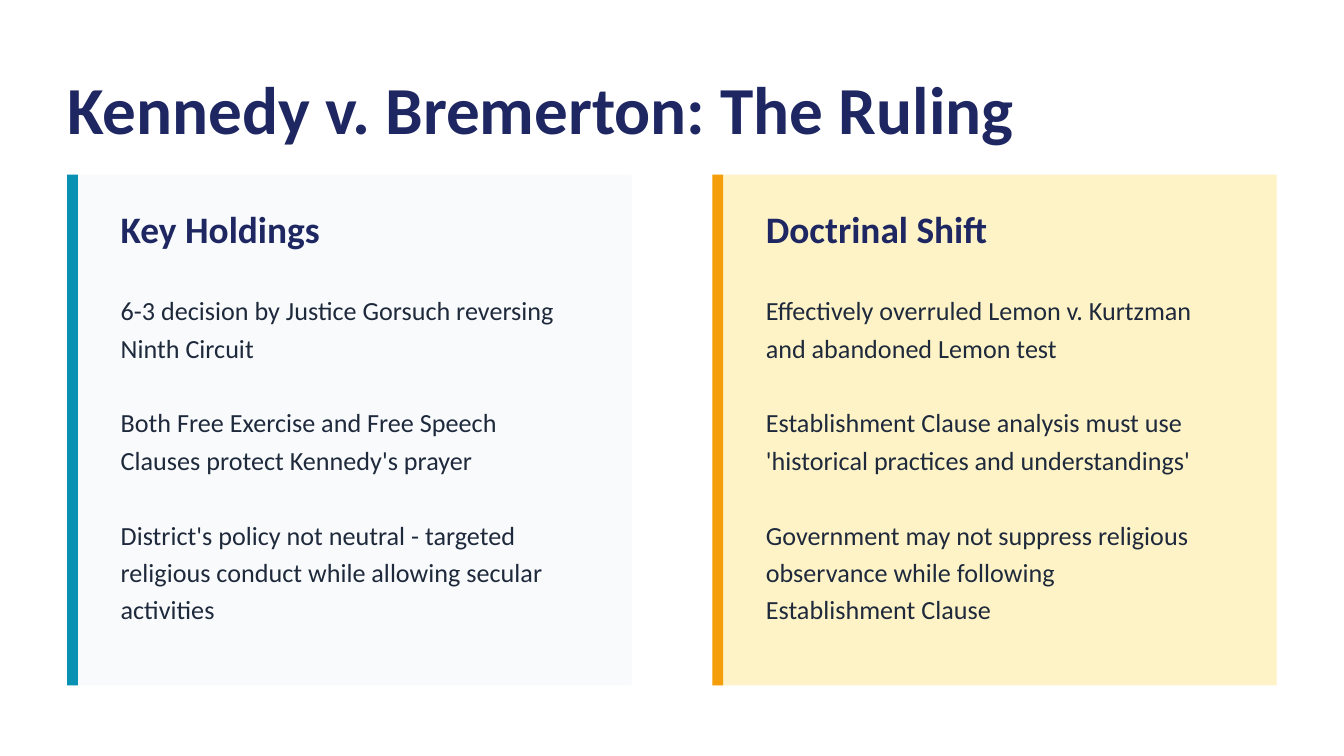
from pptx import Presentation
from pptx.dml.color import RGBColor
from pptx.enum.shapes import MSO_SHAPE
from pptx.enum.text import MSO_ANCHOR
from pptx.util import Emu, Pt

RECTANGLE = MSO_SHAPE.RECTANGLE
MIDDLE = MSO_ANCHOR.MIDDLE

EMU_PER_PX = 4572  # 200 px to the inch
SLIDE_WIDTH, SLIDE_HEIGHT = 2000, 1125
MARGIN = 100
CARD_TOP, CARD_WIDTH, CARD_HEIGHT = 260, 840, 760
CARD_GAP = SLIDE_WIDTH - 2 * MARGIN - 2 * CARD_WIDTH

FONT = "Calibri"
NAVY = "1E2761"
INK = "1E293B"

CARDS = [
    ("Key Holdings", "F8FAFC", "0891B2", [
        "6-3 decision by Justice Gorsuch reversing Ninth Circuit",
        "Both Free Exercise and Free Speech Clauses protect Kennedy's prayer",
        "District's policy not neutral - targeted religious conduct "
        "while allowing secular activities",
    ]),
    ("Doctrinal Shift", "FEF3C7", "F59E0B", [
        "Effectively overruled Lemon v. Kurtzman and abandoned Lemon test",
        "Establishment Clause analysis must use "
        "'historical practices and understandings'",
        "Government may not suppress religious observance "
        "while following Establishment Clause",
    ]),
]


def px(length):
    return Emu(length * EMU_PER_PX)


def color(hex_value):
    return RGBColor.from_string(hex_value)


def add_panel(slide, left, top, width, height, fill):
    panel = slide.shapes.add_shape(
        RECTANGLE, px(left), px(top), px(width), px(height))
    panel.shadow.inherit = False
    panel.fill.solid()
    panel.fill.fore_color.rgb = color(fill)
    panel.line.fill.background()


def add_text(slide, left, top, width, height, lines, size, ink,
             bold=False, side_inset=20, line_spacing=None):
    """Place paragraphs, with one blank line's height between them."""
    frame = slide.shapes.add_textbox(
        px(left), px(top), px(width), px(height)).text_frame
    frame.word_wrap = True
    frame.vertical_anchor = MIDDLE
    frame.margin_left = frame.margin_right = px(side_inset)
    frame.margin_top = frame.margin_bottom = 0
    for index, line in enumerate(lines):
        paragraph = frame.add_paragraph() if index else frame.paragraphs[0]
        paragraph.text = line
        paragraph.font.name = FONT
        paragraph.font.size = Pt(size)
        paragraph.font.bold = bold
        paragraph.font.color.rgb = color(ink)
        if line_spacing:
            paragraph.line_spacing = Pt(line_spacing)
            if index:
                paragraph.space_before = Pt(line_spacing)


def add_title(slide, left, top, width, height):
    add_text(slide, left, top, width, height,
             ["Kennedy v. Bremerton: The Ruling"], 36, NAVY,
             bold=True, side_inset=0)


def add_card(slide, left, top, width, height, heading, fill, accent, points):
    text_left, text_width = left + 60, width - 140
    add_panel(slide, left, top, width, height, fill)
    add_panel(slide, left, top, 16, height, accent)
    add_text(slide, text_left, top + 40, text_width, 80,
             [heading], 20, NAVY, bold=True)
    add_text(slide, text_left, top + 140, text_width, height - 200,
             points, 14, INK, line_spacing=20)


def main():
    deck = Presentation()
    deck.slide_width, deck.slide_height = px(SLIDE_WIDTH), px(SLIDE_HEIGHT)
    slide = deck.slides.add_slide(deck.slide_layouts[6])
    slide.background.fill.solid()
    slide.background.fill.fore_color.rgb = color("FFFFFF")
    add_title(slide, MARGIN, 100, SLIDE_WIDTH - 2 * MARGIN, 120)
    for column, card in enumerate(CARDS):
        left = MARGIN + column * (CARD_WIDTH + CARD_GAP)
        add_card(slide, left, CARD_TOP, CARD_WIDTH, CARD_HEIGHT, *card)
    deck.save("out.pptx")


if __name__ == "__main__":
    main()
